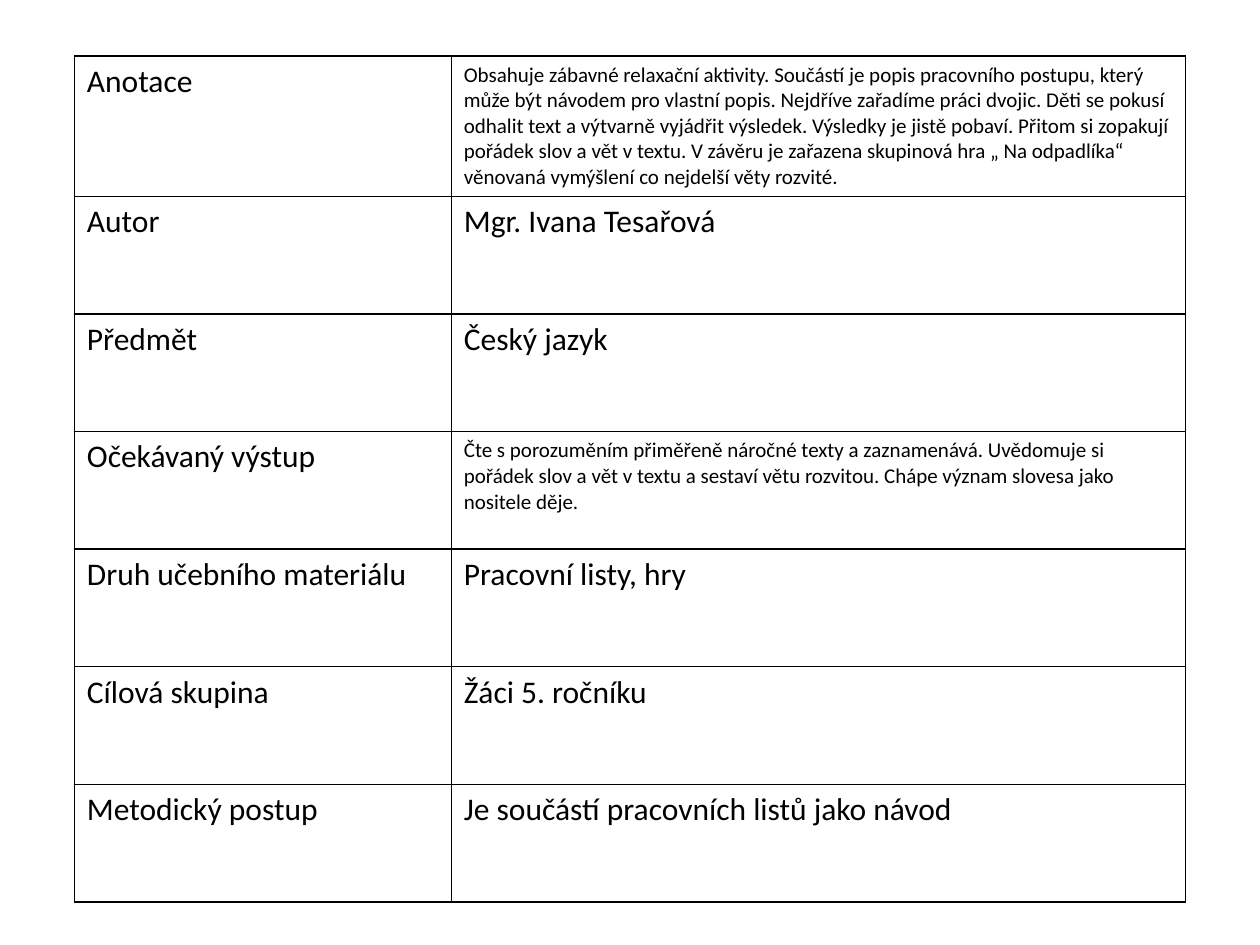
from lxml.etree import SubElement
from pptx import Presentation
from pptx.dml.color import RGBColor
from pptx.oxml.ns import qn
from pptx.util import Pt

LARGE, SMALL = 18, 12
ROWS = [
    ("Anotace",
     "Obsahuje zábavné relaxační aktivity. Součástí je popis pracovního postupu, "
     "který může být návodem pro vlastní popis. Nejdříve zařadíme práci dvojic. "
     "Děti se pokusí odhalit text a výtvarně vyjádřit výsledek. Výsledky je jistě "
     "pobaví. Přitom si zopakují pořádek slov a vět v textu. V závěru je zařazena "
     "skupinová hra „ Na odpadlíka“ věnovaná vymýšlení co nejdelší věty rozvité.",
     SMALL),
    ("Autor", "Mgr. Ivana Tesařová", LARGE),
    ("Předmět", "Český jazyk", LARGE),
    ("Očekávaný výstup",
     "Čte s porozuměním přiměřeně náročné texty a zaznamenává. Uvědomuje si "
     "pořádek slov a vět v textu a sestaví větu rozvitou. Chápe význam slovesa "
     "jako nositele děje.",
     SMALL),
    ("Druh učebního materiálu", "Pracovní listy, hry", LARGE),
    ("Cílová skupina", "Žáci 5. ročníku", LARGE),
    ("Metodický postup", "Je součástí pracovních listů jako návod", LARGE),
]
COLORS = {"ink": "000000"}
FONT = "Calibri"
LEFT, TOP = 42.5, 31.9
COLUMN_WIDTHS = (215.4, 419.6)
ROW_HEIGHT = 67.2
BORDER_WIDTH = 1


def add_borders(cell):
    properties = cell._tc.get_or_add_tcPr()
    for side in ("a:lnL", "a:lnR", "a:lnT", "a:lnB"):
        line = SubElement(properties, qn(side), w=str(Pt(BORDER_WIDTH)))
        fill = SubElement(line, qn("a:solidFill"))
        SubElement(fill, qn("a:srgbClr"), val=COLORS["ink"])


def write_text(cell, text, size=LARGE, color="ink"):
    paragraph = cell.text_frame.paragraphs[0]
    span = paragraph.add_run()
    span.text = text
    span.font.name = FONT
    span.font.size = Pt(size)
    span.font.color.rgb = RGBColor.from_string(COLORS[color])


def main():
    deck = Presentation()
    deck.slide_width, deck.slide_height = Pt(720), Pt(540)
    page = deck.slides.add_slide(deck.slide_layouts[6])

    table = page.shapes.add_table(
        len(ROWS), len(COLUMN_WIDTHS), Pt(LEFT), Pt(TOP),
        Pt(sum(COLUMN_WIDTHS)), Pt(ROW_HEIGHT * len(ROWS))).table
    table.first_row = False
    table.horz_banding = False
    for column, width in zip(table.columns, COLUMN_WIDTHS):
        column.width = Pt(width)

    for row, (label, detail, detail_size) in zip(table.rows, ROWS):
        row.height = Pt(ROW_HEIGHT)
        label_cell, detail_cell = row.cells
        write_text(label_cell, label)
        write_text(detail_cell, detail, size=detail_size)
        for cell in (label_cell, detail_cell):
            add_borders(cell)
            cell.fill.background()

    deck.save("out.pptx")


if __name__ == "__main__":
    main()
